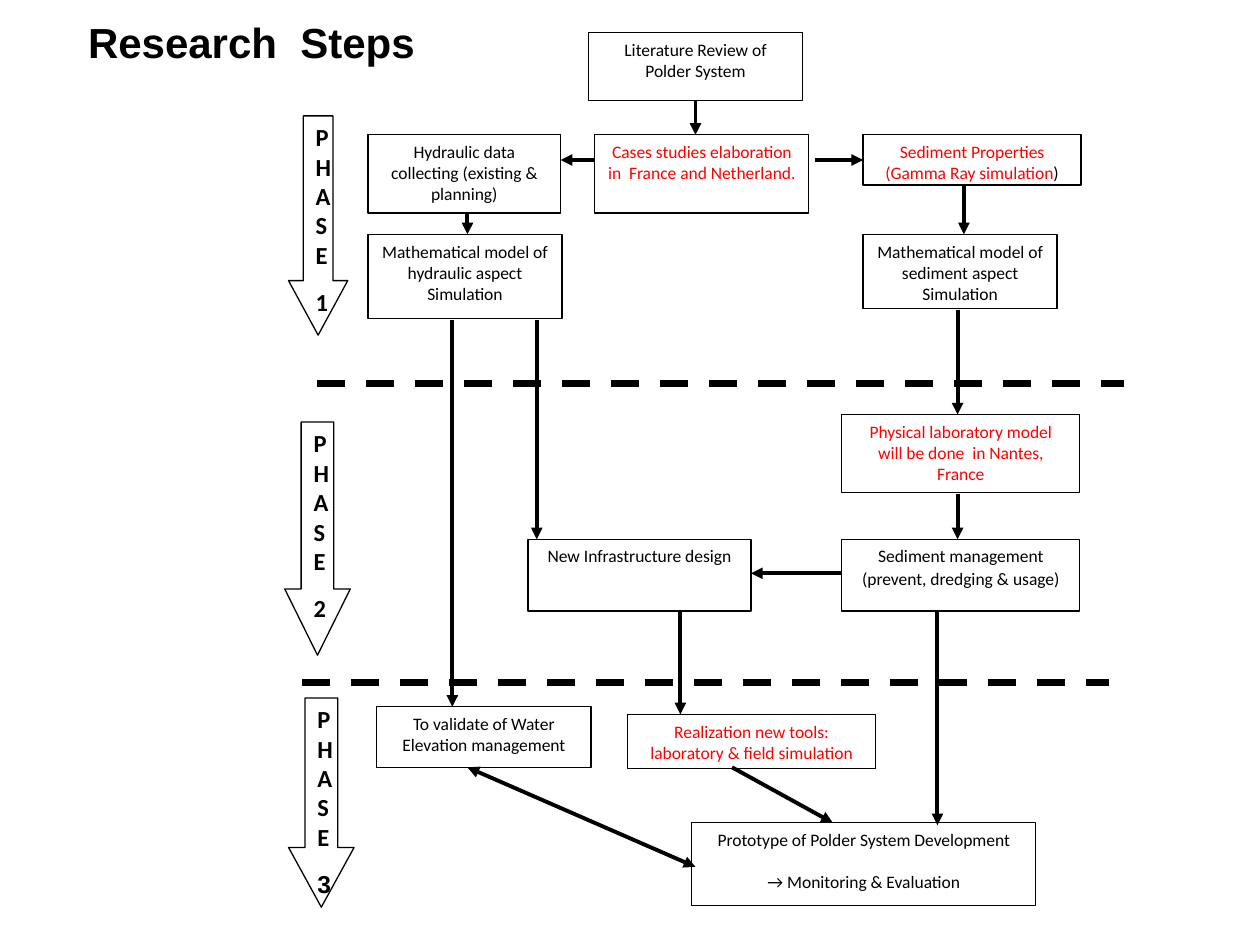
from dataclasses import dataclass

import pptx
import pptx.dml.color
import pptx.enum.dml
import pptx.enum.shapes
import pptx.enum.text
import pptx.oxml.ns
import pptx.util
from lxml import etree

EMU_PER_PX = 9144  # 100 px to the inch
ALIGN = pptx.enum.text.PP_ALIGN
SHAPE = pptx.enum.shapes.MSO_SHAPE


@dataclass(frozen=True)
class Theme:
    ink: str = "000000"
    accent: str = "FF0000"
    paper: str = "FFFFFF"
    body_font: str = "Calibri"
    title_font: str = "Arial"
    title_size: int = 24
    phase_size: int = 14
    body_size: int = 10
    gap_size: int = 11
    para_gap: int = 10
    outline: float = 0.75
    arrow: float = 2.25
    divider: float = 4


THEME = Theme()


@dataclass(frozen=True)
class Run:
    text: str
    color: str = THEME.ink
    size: int = THEME.body_size
    font: str = THEME.body_font
    bold: bool = False


@dataclass(frozen=True)
class Box:
    left: int
    top: int
    width: int
    height: int
    paras: tuple[tuple[Run, ...], ...]
    alpha: int = 50
    gap: int = 0


@dataclass(frozen=True)
class Phase:
    left: int
    top: int
    width: int
    height: int
    head: float
    number: str
    align: ALIGN = ALIGN.CENTER
    number_font: str = THEME.body_font


@dataclass(frozen=True)
class Line:
    x1: int
    y1: int
    x2: int
    y2: int
    both_ends: bool = False


def px(n: int) -> pptx.util.Emu:
    return pptx.util.Emu(n * EMU_PER_PX)


def rgb(color: str) -> pptx.dml.color.RGBColor:
    return pptx.dml.color.RGBColor.from_string(color)


def black(*lines: str) -> tuple[tuple[Run, ...], ...]:
    return tuple((Run(line),) for line in lines)


def red(*lines: str) -> tuple[tuple[Run, ...], ...]:
    return tuple((Run(line, THEME.accent),) for line in lines)


def add_run(p, run: Run) -> None:
    r = p.add_run()
    r.text = run.text
    r.font.name = run.font
    r.font.size = pptx.util.Pt(run.size)
    r.font.bold = run.bold
    r.font.color.rgb = rgb(run.color)


def write(tf, paras: tuple[tuple[Run, ...], ...], align: ALIGN, gap: int) -> None:
    tf.word_wrap = True
    tf.vertical_anchor = pptx.enum.text.MSO_ANCHOR.TOP
    for i, runs in enumerate(paras):
        p = tf.paragraphs[0] if i == 0 else tf.add_paragraph()
        p.alignment = align
        p.space_after = pptx.util.Pt(gap)
        for run in runs:
            add_run(p, run)


def add_outlined(s, kind: SHAPE, item: Box | Phase):
    sp = s.shapes.add_shape(kind, px(item.left), px(item.top), px(item.width), px(item.height))
    sp.shadow.inherit = False
    sp.fill.solid()
    sp.fill.fore_color.rgb = rgb(THEME.paper)
    sp.line.color.rgb = rgb(THEME.ink)
    sp.line.width = pptx.util.Pt(THEME.outline)
    return sp


def add_box(s, box: Box) -> None:
    sp = add_outlined(s, SHAPE.RECTANGLE, box)
    if box.alpha < 100:
        color = sp.fill._xPr.find(".//" + pptx.oxml.ns.qn("a:srgbClr"))
        etree.SubElement(color, pptx.oxml.ns.qn("a:alpha"), val=str(box.alpha * 1000))
    write(sp.text_frame, box.paras, ALIGN.CENTER, box.gap)


def add_phase(s, phase: Phase) -> None:
    sp = add_outlined(s, SHAPE.DOWN_ARROW, phase)
    sp.adjustments[0] = 0.5
    sp.adjustments[1] = phase.head
    word = Run("PHASE", size=THEME.phase_size, bold=True)
    number = Run(phase.number, size=THEME.phase_size, font=phase.number_font, bold=True)
    write(sp.text_frame, ((word,), (number,)), phase.align, THEME.para_gap)
    sp.text_frame.paragraphs[1].alignment = ALIGN.CENTER


def add_line(s, line: Line, width: float):
    cx = s.shapes.add_connector(pptx.enum.shapes.MSO_CONNECTOR.STRAIGHT,
                                px(line.x1), px(line.y1), px(line.x2), px(line.y2))
    cx.line.color.rgb = rgb(THEME.ink)
    cx.line.width = pptx.util.Pt(width)
    etree.SubElement(cx._element.spPr, pptx.oxml.ns.qn("a:effectLst"))
    return cx


def add_divider(s, line: Line) -> None:
    add_line(s, line, THEME.divider).line.dash_style = pptx.enum.dml.MSO_LINE.DASH


def add_arrow(s, line: Line) -> None:
    ln = add_line(s, line, THEME.arrow).line._get_or_add_ln()
    for tag in ("a:headEnd", "a:tailEnd") if line.both_ends else ("a:tailEnd",):
        etree.SubElement(ln, pptx.oxml.ns.qn(tag), type="triangle")


def add_title(s) -> None:
    tf = s.shapes.add_textbox(px(60), px(5), px(311), px(40)).text_frame
    tf.margin_top = px(8)
    title = Run("Research  Steps", size=THEME.title_size, font=THEME.title_font, bold=True)
    write(tf, ((title,),), ALIGN.LEFT, 0)


DIVIDERS = (Line(252, 304, 892, 304), Line(240, 542, 880, 542))

PHASES = (
    Phase(229, 92, 47, 174, 0.92, "1", align=ALIGN.LEFT),
    Phase(226, 335, 52, 185, 1.01, "2"),
    Phase(229, 554, 52, 166, 0.91, "3", number_font=THEME.title_font),
)

BOXES = (
    # Phase 1
    Box(467, 26, 170, 54, black("Literature Review of Polder System"), alpha=100),
    Box(292, 107, 153, 62, black("Hydraulic data collecting (existing & planning)")),
    Box(472, 107, 170, 62, red("Cases studies elaboration in  France and Netherland.")),
    Box(685, 107, 173, 40, (*red("Sediment Properties"),
                            (Run("(Gamma Ray simulation", THEME.accent), Run(")")))),
    Box(292, 186, 154, 67, black("Mathematical model of hydraulic aspect Simulation")),
    Box(685, 186, 154, 59, black("Mathematical model of sediment aspect Simulation"), alpha=100),
    # Phase 2
    Box(668, 329, 189, 62, red("Physical laboratory model", "will be done  in Nantes, France")),
    Box(419, 428, 177, 57, black("New Infrastructure design")),
    Box(668, 428, 189, 57, ((Run("Sediment management (prevent, dredging &"),
                             Run(" ", size=THEME.gap_size), Run("usage)")),)),
    # Phase 3
    Box(299, 561, 170, 48, black("To validate of Water Elevation management")),
    Box(498, 567, 197, 43, red("Realization new tools: laboratory & field simulation")),
    Box(549, 653, 273, 66, black("Prototype of Polder System Development",
                                 "→ Monitoring & Evaluation"), gap=12),
)

ARROWS = (
    Line(552, 79, 552, 107), Line(472, 127, 445, 127), Line(647, 127, 685, 127),
    Line(371, 170, 371, 186), Line(765, 148, 765, 186), Line(760, 246, 760, 329),
    Line(426, 254, 426, 428), Line(359, 254, 359, 561), Line(760, 392, 760, 428),
    Line(668, 455, 596, 455), Line(540, 485, 540, 567), Line(744, 485, 744, 655),
    Line(371, 609, 552, 688, both_ends=True), Line(581, 609, 661, 653),
)


def main() -> None:
    prs = pptx.Presentation()
    prs.slide_width, prs.slide_height = px(1000), px(750)
    s = prs.slides.add_slide(prs.slide_layouts[6])
    for draw, items in ((add_divider, DIVIDERS), (add_phase, PHASES),
                        (add_box, BOXES), (add_arrow, ARROWS)):
        for item in items:
            draw(s, item)
    add_title(s)
    prs.save("out.pptx")


if __name__ == "__main__":
    main()
